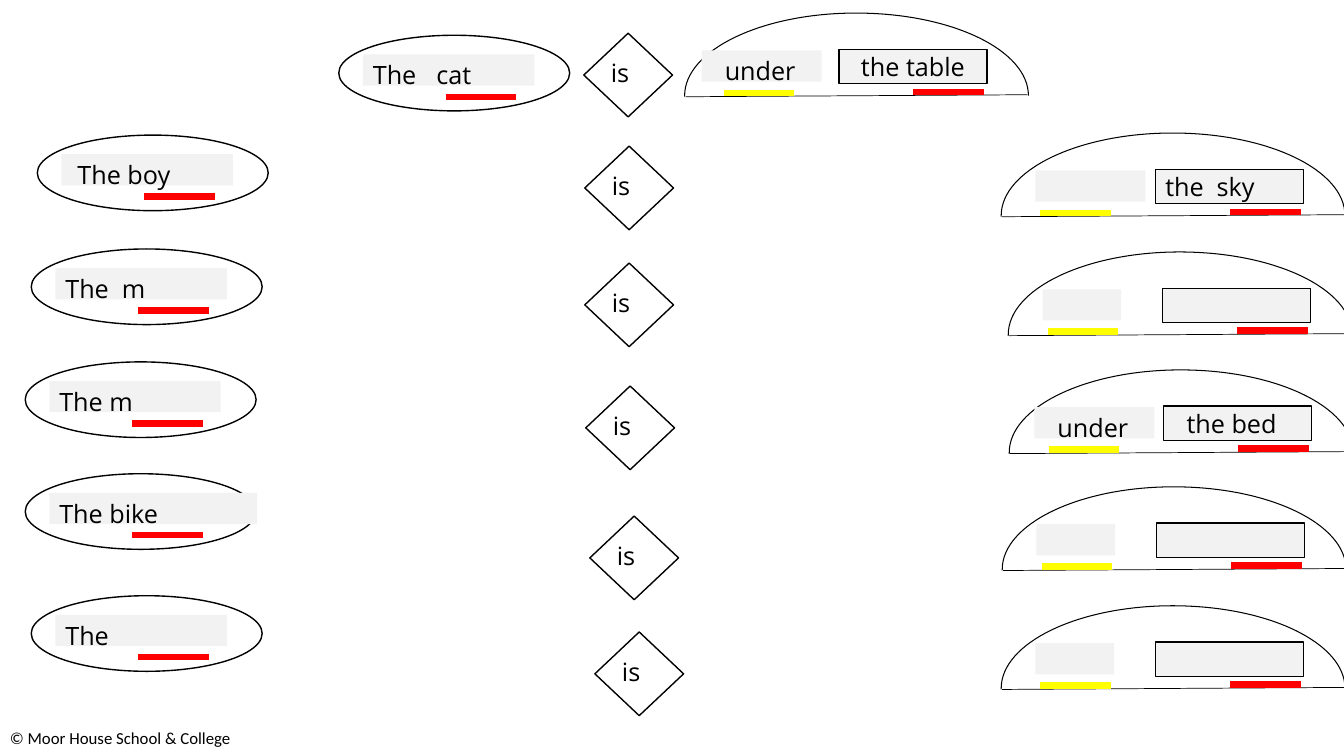
"""Build a sentence-building worksheet slide of subjects, verbs and places."""
from dataclasses import dataclass

from lxml.etree import SubElement
from pptx import Presentation
from pptx.dml.color import RGBColor
from pptx.enum.shapes import MSO_CONNECTOR, MSO_SHAPE
from pptx.enum.text import MSO_ANCHOR as Anchor, PP_ALIGN as Align
from pptx.oxml.ns import qn
from pptx.util import Inches, Pt

BLACK, GREY, RED, YELLOW = "000000", "F2F2F2", "FF0000", "FFFF00"
DOME_START = (0, 0.83)
DOME_CURVES = [
    (0, 0.83), (0, 0.82), (0, 0.82),
    (0, 0.37), (0.76, 0), (1.7, 0),
    (2.65, 0), (3.41, 0.37), (3.41, 0.82),
]


@dataclass
class Subject:
    left: float
    top: float
    text: str
    indent: float = 0
    tab: float = 0
    width: float = 1.7


@dataclass
class Verb:
    left: float
    top: float


@dataclass
class Place:
    left: float
    top: float
    word_left: float
    word_width: float
    word: str = ""
    phrase: str = ""
    indent: float = 0
    tab: float = 0
    align: Align = Align.LEFT


SUBJECTS = [
    Subject(3.36, 0.35, "The\tcat", tab=0.63),
    Subject(0.37, 1.34, "The boy", indent=0.06),
    Subject(0.31, 2.47, "The\tm", tab=0.56),
    Subject(0.25, 3.59, "The m"),
    Subject(0.25, 4.7, "The bike", width=2.06),
    Subject(0.31, 5.91, "The"),
]
VERBS = [Verb(5.79, 0.33), Verb(5.8, 1.45), Verb(5.8, 2.61),
         Verb(5.81, 3.83), Verb(5.85, 5.12), Verb(5.9, 6.27)]
PLACES = [
    Place(6.79, 0.13, 0.17, 1.19, "under", "the table", align=Align.CENTER),
    Place(9.93, 1.32, 0.34, 1.09, phrase="the\tsky", tab=0.51),
    Place(10, 2.5, 0.34, 0.78),
    Place(10.01, 3.67, 0.25, 1.19, "under", "the bed", indent=0.13),
    Place(9.94, 4.83, 0.34, 0.78),
    Place(9.93, 6.01, 0.34, 0.78),
]


def color(value: str) -> RGBColor:
    """Turn a hex string into a colour."""
    return RGBColor.from_string(value)


def write(box, text: str, *, size: float = 18, font: str = "Open Sans", indent: float = 0,
          tab: float = 0, align: Align = Align.LEFT, anchor: Anchor = Anchor.TOP) -> None:
    """Put one formatted line of text into a box."""
    frame = box.text_frame
    frame.word_wrap = True
    frame.vertical_anchor = anchor
    para = frame.paragraphs[0]
    para.alignment = align
    if indent:
        para._p.get_or_add_pPr().set("marL", str(Inches(indent)))
    if tab:
        stops = SubElement(para._p.get_or_add_pPr(), qn("a:tabLst"))
        SubElement(stops, qn("a:tab"), pos=str(Inches(tab)), algn="l")
    span = para.add_run()
    span.text = text
    span.font.size = Pt(size)
    span.font.name = font
    span.font.color.rgb = color(BLACK)


def style(shape, fill: str = "", line: float = 0) -> None:
    """Set the fill and the black outline of a shape."""
    shape.shadow.inherit = False
    if fill:
        shape.fill.solid()
        shape.fill.fore_color.rgb = color(fill)
    else:
        shape.fill.background()
    if line:
        shape.line.color.rgb = color(BLACK)
        shape.line.width = Pt(line)
    else:
        shape.line.fill.background()


def add_shape(shapes, kind: MSO_SHAPE, left: float, top: float, width: float, height: float,
              fill: str = "", line: float = 0):
    """Add a styled preset shape."""
    shape = shapes.add_shape(kind, Inches(left), Inches(top), Inches(width), Inches(height))
    style(shape, fill, line)
    return shape


def add_text(shapes, left: float, top: float, width: float, height: float, text: str,
             **format) -> None:
    """Add a text box with one line of text."""
    box = shapes.add_textbox(Inches(left), Inches(top), Inches(width), Inches(height))
    write(box, text, **format)


def add_line(shapes, start: tuple[float, float], end: tuple[float, float],
             hue: str, width: float) -> None:
    """Add a straight line without a shadow."""
    line = shapes.add_connector(MSO_CONNECTOR.STRAIGHT, *map(Inches, start + end))
    line.line.color.rgb = color(hue)
    line.line.width = Pt(width)
    SubElement(line._element.spPr, qn("a:effectLst"))


def add_underline(shapes, left: float, top: float, hue: str) -> None:
    """Add a thick coloured bar below a word."""
    add_line(shapes, (left, top), (left + 0.7, top), hue, 4.5)


def add_dome(shapes, left: float, top: float) -> None:
    """Add an open half ellipse made of cubic curves."""
    start, *points = [(Inches(left + x), Inches(top + y)) for x, y in [DOME_START, *DOME_CURVES]]
    builder = shapes.build_freeform(*start)
    builder.add_line_segments(points, close=False)
    dome = builder.convert_to_shape()
    style(dome, line=0.75)
    outline = dome._element.spPr.find(f".//{qn('a:path')}")
    segments = outline.findall(qn("a:lnTo"))
    for first in range(0, len(segments), 3):
        curve = SubElement(outline, qn("a:cubicBezTo"))
        for segment in segments[first:first + 3]:
            curve.append(segment[0])
            outline.remove(segment)


def draw_subject(page, subject: Subject) -> None:
    """Draw an ellipse with its subject and a red underline."""
    shapes = page.shapes.add_group_shape().shapes
    left, top = subject.left, subject.top
    add_shape(shapes, MSO_SHAPE.OVAL, left, top, 2.29, 0.75, line=1)
    box = add_shape(shapes, MSO_SHAPE.RECTANGLE, left + 0.24, top + 0.19,
                    subject.width, 0.31, GREY)
    write(box, subject.text, indent=subject.indent, tab=subject.tab)
    add_underline(shapes, left + 1.06, top + 0.61, RED)


def draw_verb(page, verb: Verb) -> None:
    """Draw a diamond with its verb."""
    shapes = page.shapes.add_group_shape().shapes
    add_shape(shapes, MSO_SHAPE.DIAMOND, verb.left, verb.top, 0.88, 0.83, line=1)
    add_text(shapes, verb.left + 0.17, verb.top + 0.19, 0.7, 0.31, "is")


def draw_place(page, place: Place) -> None:
    """Draw a dome with a preposition, a noun phrase and their underlines."""
    shapes = page.shapes.add_group_shape().shapes
    left, top = place.left, place.top
    add_dome(shapes, left, top)
    add_line(shapes, (left + 3.4, top + 0.81), (left + 0.01, top + 0.83), BLACK, 0.5)
    word = add_shape(shapes, MSO_SHAPE.RECTANGLE, left + place.word_left, top + 0.37,
                     place.word_width, 0.31, GREY)
    if place.word:
        write(word, place.word, indent=0.13)
    phrase = add_shape(shapes, MSO_SHAPE.RECTANGLE, left + 1.53, top + 0.36, 1.47, 0.34, GREY, 1)
    if place.phrase:
        write(phrase, place.phrase, indent=place.indent, tab=place.tab,
              align=place.align, anchor=Anchor.MIDDLE)
    add_underline(shapes, left + 0.39, top + 0.79, YELLOW)
    add_underline(shapes, left + 2.27, top + 0.78, RED)


def main() -> None:
    """Build and save the deck."""
    deck = Presentation()
    deck.slide_width, deck.slide_height = Inches(13.33), Inches(7.5)
    page = deck.slides.add_slide(deck.slide_layouts[6])
    add_text(page.shapes, 0, 7.17, 4.27, 0.3, "© Moor House School & College",
             size=12, font="Calibri")
    for draw, items in ((draw_subject, SUBJECTS), (draw_verb, VERBS), (draw_place, PLACES)):
        for item in items:
            draw(page, item)
    deck.save("out.pptx")


if __name__ == "__main__":
    main()
